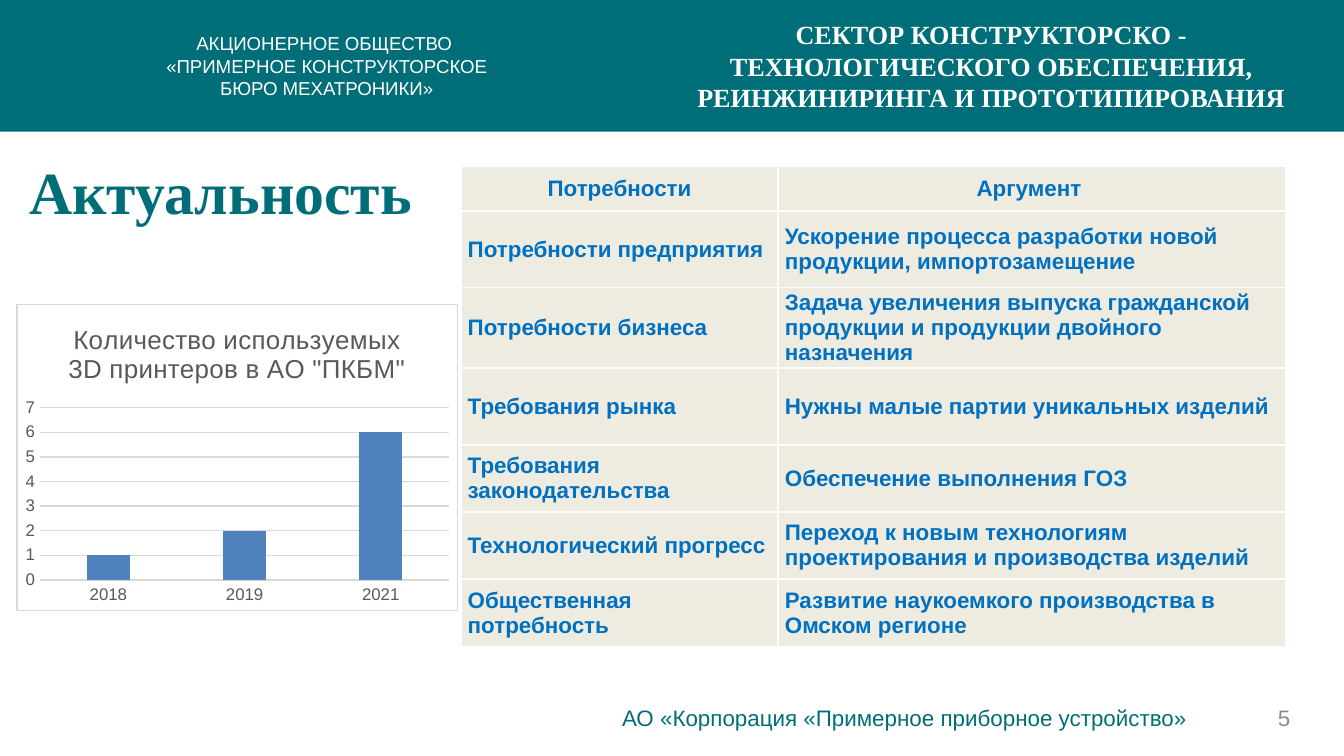
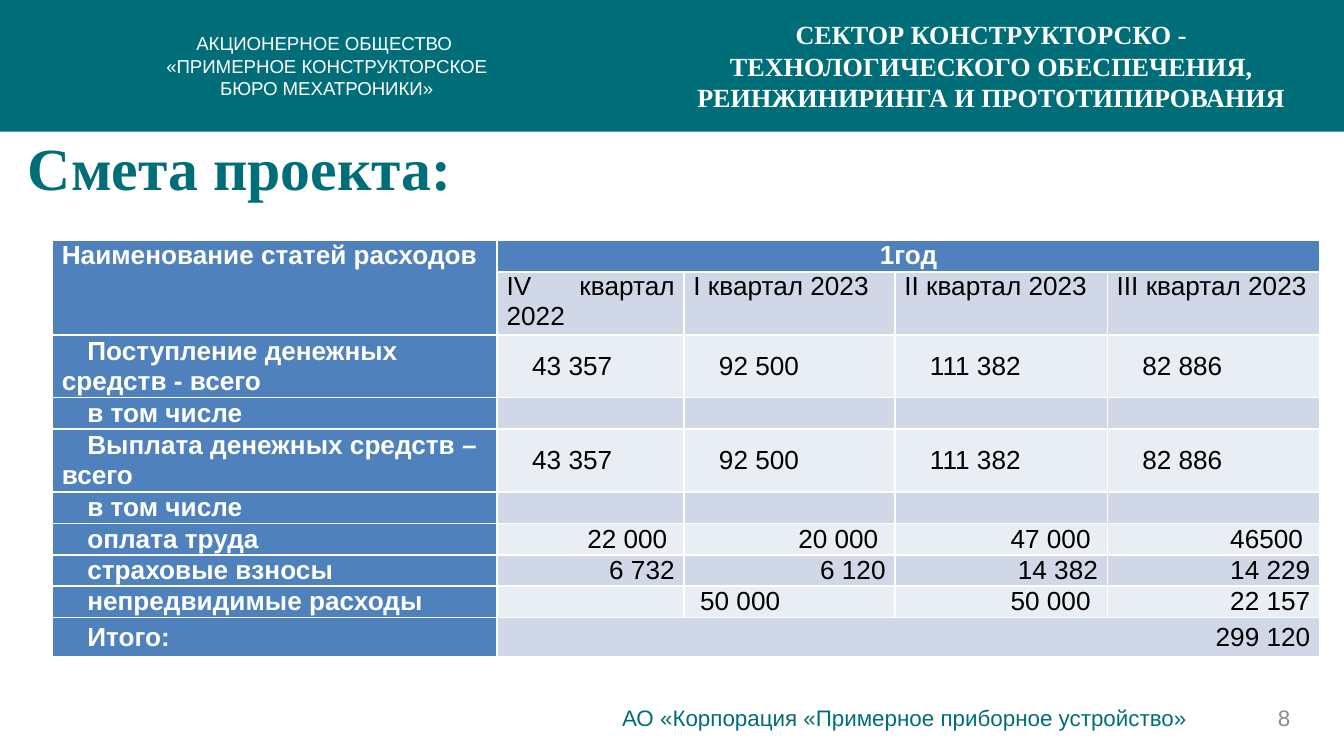
"""Build the two project slides: relevance and budget."""
from dataclasses import dataclass, field
from typing import Any

from lxml.etree import SubElement
from pptx import Presentation
from pptx.chart.data import CategoryChartData as ChartData
from pptx.dml.color import RGBColor as Rgb
from pptx.enum.chart import XL_CHART_TYPE as Kind, XL_TICK_MARK as Tick
from pptx.enum.shapes import MSO_SHAPE as Form
from pptx.enum.text import MSO_ANCHOR as Anchor, PP_ALIGN as Align
from pptx.oxml import parse_xml
from pptx.oxml.ns import nsdecls, qn
from pptx.util import Inches, Pt

HUES = {
    "teal": "006E78", "white": "FFFFFF", "black": "000000", "grey": "8C8C8C",
    "dark": "595959", "rule": "D9D9D9", "sand": "EEECE1", "link": "0070C0",
    "blue": "4F81BD", "mid": "D0D8E8", "pale": "E9EDF4",
}
SERIF = "Times New Roman"
SANS = "Arial"


@dataclass
class Label:
    """Text with its place and format."""
    text: str
    left: float
    top: float
    width: float
    height: float
    wrap: bool = True
    anchor: Any = Anchor.TOP
    form: dict[str, Any] = field(default_factory=dict)


@dataclass
class Grid:
    """Place and track sizes of a table."""
    left: float
    top: float
    cols: list[float]
    rows: list[float]
    pad: float


SHARED = [
    Label("АКЦИОНЕРНОЕ ОБЩЕСТВО \n«ПРИМЕРНОЕ КОНСТРУКТОРСКОЕ БЮРО МЕХАТРОНИКИ»",
          1.04, 0.19, 2.78, 0.61,
          form=dict(size=10, hue="white", align=Align.CENTER)),
    Label("СЕКТОР КОНСТРУКТОРСКО - ТЕХНОЛОГИЧЕСКОГО ОБЕСПЕЧЕНИЯ, "
          "РЕИНЖИНИРИНГА И ПРОТОТИПИРОВАНИЯ",
          5, 0.34, 4.75, 0.3, anchor=Anchor.MIDDLE,
          form=dict(size=14, hue="white", bold=True, face=SERIF, align=Align.CENTER)),
    Label("АО «Корпорация «Примерное приборное устройство»",
          4.53, 5.19, 4.49, 0.3, form=dict(hue="teal")),
]

NEEDS = [
    ("Потребности", "Аргумент "),
    ("Потребности предприятия",
     "Ускорение процесса разработки новой продукции, импортозамещение"),
    ("Потребности бизнеса",
     "Задача увеличения выпуска гражданской продукции и продукции двойного назначения"),
    ("Требования рынка", "Нужны малые партии уникальных изделий"),
    ("Требования законодательства", "Обеспечение выполнения ГОЗ"),
    ("Технологический прогресс",
     "Переход к новым технологиям проектирования и производства изделий"),
    ("Общественная потребность", "Развитие наукоемкого производства в Омском регионе"),
]

FLOW = ("43 357", "92 500", "111 382", "82 886")
BLANK = ("",) * 4
COSTS = [
    ("Наименование статей расходов", "1год", "", "", ""),
    ("", "IV квартал 2022", "I квартал 2023", "II квартал 2023", "III квартал 2023"),
    ("Поступление денежных средств - всего", *FLOW),
    ("в том числе", *BLANK),
    ("Выплата денежных средств – всего", *FLOW),
    ("в том числе", *BLANK),
    ("оплата труда", "22 000 ", "20 000 ", "47 000 ", "46500 "),
    ("страховые взносы", "6 732", "6 120", "14 382", "14 229"),
    ("непредвидимые расходы", "", "50 000", "50 000 ", "22 157"),
    ("Итого:", "299 120", "", "", ""),
]


def tint(name: str) -> Rgb:
    """Return a named colour."""
    return Rgb.from_string(HUES[name])


def style(font: Any, size: float, hue: str, bold: bool = False, face: str = SANS) -> None:
    """Set the look of a font."""
    font.size, font.bold, font.name = Pt(size), bold, face
    font.color.rgb = tint(hue)


def write(frame: Any, text: str, *, size: float = 12, hue: str = "black",
          bold: bool = False, face: str = SANS, align: Any = Align.LEFT,
          dent: float = 0) -> None:
    """Fill a text frame with formatted paragraphs."""
    for i, line in enumerate(text.split("\n")):
        para = frame.add_paragraph() if i else frame.paragraphs[0]
        para.alignment = align
        if dent:
            props = para._p.get_or_add_pPr()
            props.set("marL", "0")
            props.set("indent", str(Inches(dent)))
        if line:
            run = para.add_run()
            run.text = line
            style(run.font, size, hue, bold, face)
        else:
            SubElement(para._p, qn("a:endParaRPr"), sz=str(size * 100))


def place(slide: Any, label: Label) -> None:
    """Draw a label as a text box."""
    box = slide.shapes.add_textbox(Inches(label.left), Inches(label.top),
                                   Inches(label.width), Inches(label.height))
    frame = box.text_frame
    frame.word_wrap = label.wrap
    frame.vertical_anchor = label.anchor
    write(frame, label.text, **label.form)


def start(deck: Any, title: Label, page: int) -> Any:
    """Add a slide with band, header, title, footer and number."""
    slide = deck.slides.add_slide(deck.slide_layouts[6])
    band = slide.shapes.add_shape(Form.RECTANGLE, 0, 0, deck.slide_width, Inches(0.98))
    band.shadow.inherit = False
    band.fill.solid()
    band.fill.fore_color.rgb = tint("teal")
    band.line.fill.background()
    title.wrap, title.anchor = False, Anchor.MIDDLE
    title.form = dict(size=32, hue="teal", bold=True, face=SERIF)
    number = Label(str(page), 9.41, 5.19, 0.47, 0.3, anchor=Anchor.MIDDLE,
                   form=dict(hue="grey"))
    for label in [*SHARED, title, number]:
        place(slide, label)
    return slide


def table(slide: Any, grid: Grid) -> Any:
    """Add a table with the given tracks and the style's white rules."""
    shape = slide.shapes.add_table(
        len(grid.rows), len(grid.cols), Inches(grid.left), Inches(grid.top),
        Inches(sum(grid.cols)), Inches(sum(grid.rows)))
    made = shape.table
    for tracks, sizes, side in ((made.columns, grid.cols, "width"),
                                (made.rows, grid.rows, "height")):
        for track, size in zip(tracks, sizes):
            setattr(track, side, Inches(size))
    return made


def paint(cell: Any, fill: str, pad: float, mid: bool = True) -> None:
    """Set fill, margins and anchor of a cell."""
    cell.fill.solid()
    cell.fill.fore_color.rgb = tint(fill)
    cell.margin_left = cell.margin_right = Inches(pad)
    cell.margin_top = cell.margin_bottom = 0
    cell.vertical_anchor = Anchor.MIDDLE if mid else Anchor.TOP


def needs(slide: Any) -> None:
    """Draw the table of needs."""
    grid = Grid(3.43, 1.24, [2.36, 3.78], [0.33] + [0.57] * 3 + [0.5] * 3, 0.05)
    made = table(slide, grid)
    for r, row in enumerate(NEEDS):
        for c, text in enumerate(row):
            cell = made.cell(r, c)
            paint(cell, "sand", grid.pad)
            write(cell.text_frame, text, hue="link", bold=True,
                  align=Align.LEFT if r else Align.CENTER)


def layout(r: int, c: int) -> dict[str, Any]:
    """Return alignment and indent of a budget cell."""
    if r == 0:
        return dict(align=Align.CENTER if c else Align.LEFT)
    if (r, c) == (1, 1):
        return dict(align=Align.JUSTIFY)
    if (r, c) == (8, 2):
        return dict(dent=0.05)
    if r > 5 and c:
        return dict(align=Align.RIGHT)
    return dict(dent=0.19 if r > 1 else 0)


def costs(slide: Any) -> None:
    """Draw the budget table."""
    one, two = 0.22, 0.44
    rows = [one, two, two, one, two] + [one] * 4 + [0.29]
    grid = Grid(0.39, 1.79, [3.31, 1.39, 1.57, 1.58, 1.58], rows, 0.07)
    made = table(slide, grid)
    for r, row in enumerate(COSTS):
        for c, text in enumerate(row):
            cell = made.cell(r, c)
            head = r == 0 or c == 0
            fill = "blue" if head else "mid" if r % 2 else "pale"
            paint(cell, fill, grid.pad, r > 1)
            write(cell.text_frame, text, size=14, bold=head,
                  hue="white" if head else "black", **layout(r, c))
    for first, last in (((0, 0), (1, 0)), ((0, 1), (0, 4)), ((9, 1), (9, 4))):
        made.cell(*first).merge(made.cell(*last))


def chart(slide: Any) -> None:
    """Draw the column chart of printers."""
    data = ChartData()
    data.categories = ["2018", "2019", "2021"]
    data.add_series("Series 1", (1, 2, 6))
    made = slide.shapes.add_chart(Kind.COLUMN_CLUSTERED, Inches(0.12), Inches(2.26),
                                  Inches(3.29), Inches(2.29), data).chart
    style(made.font, 10, "black")
    made.has_legend = False
    made.has_title = True
    write(made.chart_title.text_frame, 'Количество используемых 3D принтеров в АО "ПКБМ"',
          size=14, hue="dark", align=Align.CENTER)
    made.chart_title.include_in_layout = False
    plot = made.plots[0]
    plot.gap_width, plot.overlap, plot.vary_by_categories = 219, -27, False
    bars = plot.series[0].format.fill
    bars.solid()
    bars.fore_color.rgb = tint("blue")
    cats, vals = made.category_axis, made.value_axis
    for axis in (cats, vals):
        axis.major_tick_mark = axis.minor_tick_mark = Tick.NONE
        style(axis.tick_labels.font, 9, "dark")
    vals.minimum_scale, vals.maximum_scale, vals.major_unit = 0, 7, 1
    vals.format.line.fill.background()
    for line in (cats.format.line, vals.major_gridlines.format.line):
        line.color.rgb = tint("rule")
        line.width = Pt(0.75)
    frame = parse_xml(
        f'<c:spPr {nsdecls("c", "a")}>'
        f'<a:solidFill><a:srgbClr val="{HUES["white"]}"/></a:solidFill>'
        f'<a:ln w="{Pt(0.75)}"><a:solidFill><a:srgbClr val="{HUES["rule"]}"/></a:solidFill>'
        '</a:ln></c:spPr>')
    made._chartSpace.find(qn("c:txPr")).addprevious(frame)


def main() -> None:
    """Build and save the deck."""
    deck = Presentation()
    deck.slide_width = Inches(10)
    deck.slide_height = deck.slide_width * 9 // 16
    slide = start(deck, Label("Актуальность", 0.12, 1.1, 3.08, 0.64), 5)
    needs(slide)
    chart(slide)
    slide = start(deck, Label("Смета проекта:", 0.11, 0.92, 3.39, 0.64), 8)
    costs(slide)
    deck.save("out.pptx")


if __name__ == "__main__":
    main()
